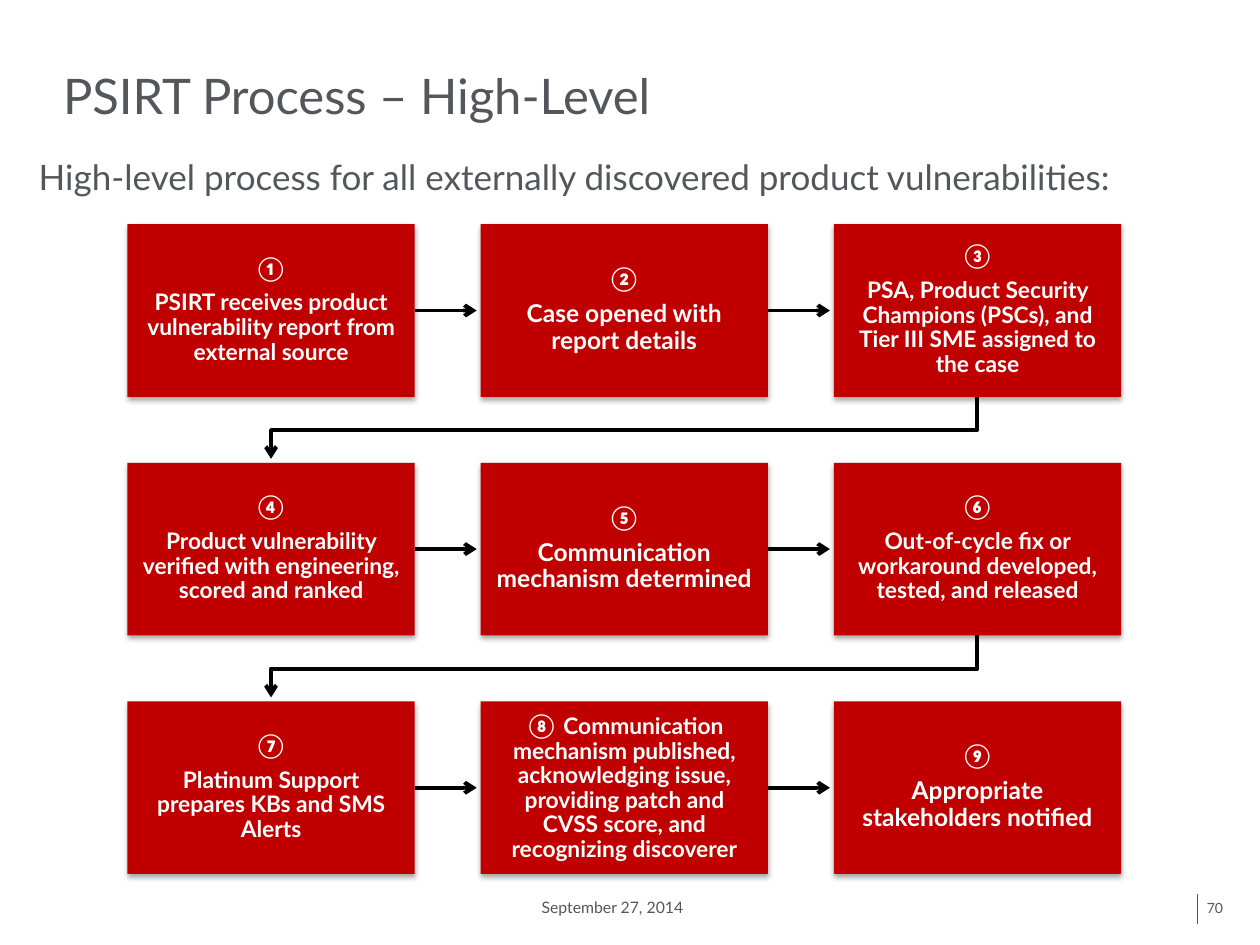
"""Builds the PSIRT process slide: nine numbered steps in a three by three flow."""
from lxml import etree
from pptx import Presentation
from pptx.dml.color import RGBColor
from pptx.enum.shapes import MSO_CONNECTOR, MSO_SHAPE
from pptx.enum.text import MSO_ANCHOR, PP_ALIGN
from pptx.oxml.ns import qn
from pptx.util import Cm, Pt

RECTANGLE = MSO_SHAPE.RECTANGLE
STRAIGHT = MSO_CONNECTOR.STRAIGHT
LEFT, CENTER = PP_ALIGN.LEFT, PP_ALIGN.CENTER
TOP, MIDDLE, BOTTOM = MSO_ANCHOR.TOP, MSO_ANCHOR.MIDDLE, MSO_ANCHOR.BOTTOM
COLORS = {"step": "C00000", "step_text": "FFFFFF", "flow": "000000", "text": "53565A"}

STEPS = [
    ("①", "PSIRT receives product vulnerability report from external source", 13),
    ("②", "Case opened with report details", 14),
    ("③", "PSA, Product Security Champions (PSCs), and Tier III SME assigned to the case", 13),
    ("④", "Product vulnerability verified with engineering, scored and ranked", 13),
    ("⑤", "Communication mechanism determined", 14),
    ("⑥", "Out-of-cycle fix or workaround developed, tested, and released", 13),
    ("⑦", "Platinum Support prepares KBs and SMS Alerts", 13),
    ("⑧ ", "Communication mechanism published, acknowledging issue, providing patch "
           "and CVSS score, and recognizing discoverer", 13),
    ("⑨", "Appropriate stakeholders notified", 14),
]
COLUMNS = 3
GRID_LEFT, GRID_TOP = 2.57, 4.52
STEP_WIDTH, STEP_HEIGHT = 5.79, 3.48
COLUMN_PITCH, ROW_PITCH = 7.12, 4.81
ARROW_LENGTH, TURN_DROP = 1.25, 0.67


def style_line(line_shape, color, width, arrow):
    line_shape.line.color.rgb = RGBColor.from_string(COLORS[color])
    line_shape.line.width = Pt(width)
    properties = line_shape.element.spPr
    if arrow:
        etree.SubElement(properties.find(qn("a:ln")), qn("a:tailEnd"), type="arrow")
    etree.SubElement(properties, qn("a:effectLst"))


def style_text(font, name, size, color, bold=False):
    font.name = name
    font.size = Pt(size)
    font.bold = bold
    font.color.rgb = RGBColor.from_string(COLORS[color])


prs = Presentation()
prs.slide_width, prs.slide_height = Cm(25.4), Cm(19.05)
slide = prs.slides.add_slide(prs.slide_layouts[5])
shapes = slide.shapes

title = shapes.title
title.left, title.top, title.width, title.height = Cm(1.27), Cm(0.51), Cm(22.86), Cm(2.01)
heading = title.text_frame
heading.text = "PSIRT Process – High-Level"
heading.vertical_anchor = BOTTOM
heading.margin_left = heading.margin_right = heading.margin_top = heading.margin_bottom = 0
heading.paragraphs[0].alignment = LEFT
heading.paragraphs[0].line_spacing = 0.9
style_text(heading.paragraphs[0].font, "Lato", 28, "text")

for index, (number, description, size) in enumerate(STEPS):
    row, column = divmod(index, COLUMNS)
    left = GRID_LEFT + column * COLUMN_PITCH
    top = GRID_TOP + row * ROW_PITCH
    right, bottom = left + STEP_WIDTH, top + STEP_HEIGHT

    step = shapes.add_shape(RECTANGLE, Cm(left), Cm(top), Cm(STEP_WIDTH), Cm(STEP_HEIGHT))
    step.fill.solid()
    step.fill.fore_color.rgb = RGBColor.from_string(COLORS["step"])
    step.line.fill.background()
    step.shadow.inherit = False
    shadow = etree.SubElement(step.element.spPr.find(qn("a:effectLst")), qn("a:outerShdw"),
                              blurRad=str(Pt(3.1)), dist=str(Pt(1.8)), dir="5400000",
                              rotWithShape="0")
    shade = etree.SubElement(shadow, qn("a:srgbClr"), val=COLORS["flow"])
    etree.SubElement(shade, qn("a:alpha"), val="35000")

    frame = step.text_frame
    frame.word_wrap = True
    frame.vertical_anchor = MIDDLE
    frame.margin_left = frame.margin_right = frame.margin_top = frame.margin_bottom = Cm(0.28)
    number_line = frame.paragraphs[0]
    description_line = number_line if number.endswith(" ") else frame.add_paragraph()
    number_run, description_run = number_line.add_run(), description_line.add_run()
    number_run.text, description_run.text = number, description
    style_text(number_run.font, "Calibri", 14, "step_text", True)
    style_text(description_run.font, "Lato", size, "step_text", True)
    for paragraph in frame.paragraphs:
        paragraph.alignment = CENTER
        paragraph.line_spacing = 0.9
        paragraph.space_after = Pt(4.9)

    if column < COLUMNS - 1:
        middle = Cm(top + STEP_HEIGHT / 2)
        arrow = shapes.add_connector(STRAIGHT, Cm(right), middle, Cm(right + ARROW_LENGTH), middle)
        style_line(arrow, "flow", 2.25, True)
    elif index < len(STEPS) - 1:
        start_x, end_x = Cm(left + STEP_WIDTH / 2), Cm(GRID_LEFT + STEP_WIDTH / 2)
        turn_y = Cm(bottom + TURN_DROP)
        outline = shapes.build_freeform(start_x, Cm(bottom))
        outline.add_line_segments(
            [(start_x, turn_y), (end_x, turn_y), (end_x, Cm(bottom + ARROW_LENGTH))], close=False)
        row_turn = outline.convert_to_shape()
        row_turn.fill.background()
        style_line(row_turn, "flow", 2.25, True)

page_rule = shapes.add_connector(STRAIGHT, Cm(24.13), Cm(18.03), Cm(24.13), Cm(18.62))
style_line(page_rule, "text", 0.5, False)

CAPTIONS = [
    ("High-level process for all externally discovered product vulnerabilities:",
     (0.53, 3.0, 24.08, 1.12), 20, TOP, 0.25, 0.13, 1.0),
    ("September 27, 2014", (10.67, 17.96, 4.5, 0.61), 9, TOP, 0.25, 0.13, 1.0),
    ("70", (24.33, 18.03, 0.64, 0.58), 8, MIDDLE, 0, 0, 0.9),
]
for wording, position, size, anchor, side_margin, end_margin, spacing in CAPTIONS:
    caption = shapes.add_textbox(*(Cm(length) for length in position)).text_frame
    caption.word_wrap = True
    caption.vertical_anchor = anchor
    caption.margin_left = caption.margin_right = Cm(side_margin)
    caption.margin_top = caption.margin_bottom = Cm(end_margin)
    caption.text = wording
    caption.paragraphs[0].line_spacing = spacing
    style_text(caption.paragraphs[0].font, "Lato", size, "text")

prs.save("out.pptx")
